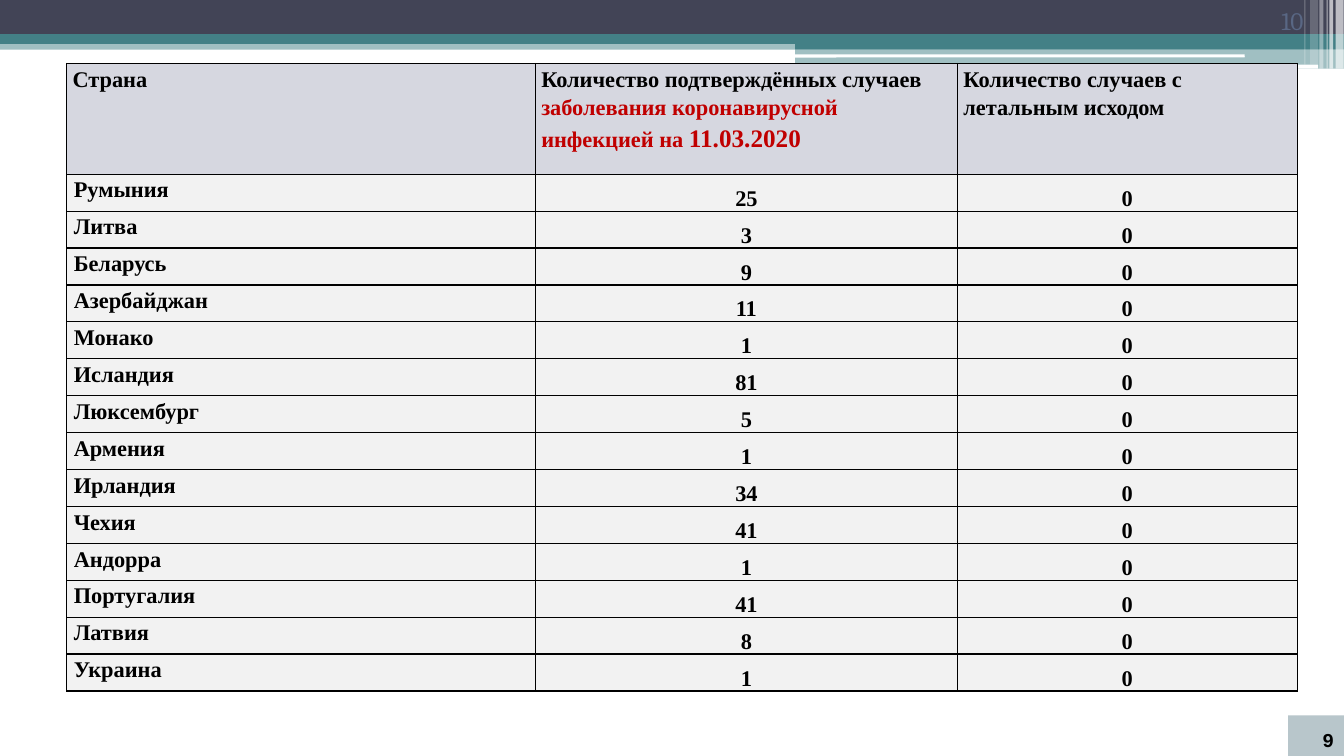
from dataclasses import dataclass

from lxml.etree import SubElement
from pptx import Presentation
from pptx.dml.color import RGBColor
from pptx.enum.shapes import MSO_SHAPE as Shp
from pptx.enum.text import MSO_ANCHOR as Anchor, PP_ALIGN as Align
from pptx.oxml import parse_xml
from pptx.oxml.ns import nsdecls, qn
from pptx.util import Cm, Pt

BLACK, WHITE, RED = "000000", "FFFFFF", "C00000"
NAVY, TEAL = "424456", "438086"
HEAD_FILL, BODY_FILL = "D6D7E0", "F2F2F2"
SERIF = "Times New Roman"


@dataclass
class Box:
    x: float
    y: float
    w: float
    h: float
    color: str
    opacity: int = 100
    kind: Shp = Shp.RECTANGLE


@dataclass
class Run:
    text: str
    size: float = 16
    color: str = BLACK
    font: str = SERIF
    bold: bool = True


@dataclass
class Country:
    name: str
    cases: int
    deaths: int = 0


BANDS = [
    Box(0, 1.02, 33.87, 0.23, TEAL, 50),
    Box(0, 0, 33.87, 0.86, NAVY),
    Box(0, 0.86, 33.87, 0.25, TEAL),
    Box(20.04, 0.99, 13.83, 0.25, TEAL),
    Box(20.04, 1.22, 13.83, 0.51, TEAL, 50),
    Box(20.02, 1.37, 11.35, 0.08, WHITE, kind=Shp.ROUNDED_RECTANGLE),
    Box(27.3, 1.63, 5.92, 0.1, WHITE, kind=Shp.ROUNDED_RECTANGLE),
]
STRIPES = [
    Box(x, 0, w, h, WHITE, opacity)
    for x, w, h, opacity in [
        (33.66, 0.2, 1.73, 65),
        (33.5, 0.1, 1.73, 65),
        (33.43, 0.03, 1.73, 60),
        (33.25, 0.1, 1.73, 40),
        (33.02, 0.2, 1.63, 20),
        (32.87, 0.03, 1.63, 30),
    ]
]
COLUMNS = [11.81, 10.64, 8.56]
HEAD_HEIGHT, ROW_HEIGHT = 2.79, 0.93
HEADER = [
    [Run("Страна")],
    [
        Run("Количество подтверждённых случаев "),
        Run("заболевания коронавирусной инфекцией на ", color=RED),
        Run("11.03.2020", 18, RED),
    ],
    [Run("Количество случаев с летальным исходом")],
]
COUNTRIES = [
    Country("Румыния", 25),
    Country("Литва", 3),
    Country("Беларусь", 9),
    Country("Азербайджан", 11),
    Country("Монако", 1),
    Country("Исландия", 81),
    Country("Люксембург", 5),
    Country("Армения", 1),
    Country("Ирландия", 34),
    Country("Чехия", 41),
    Country("Андорра", 1),
    Country("Португалия", 41),
    Country("Латвия", 8),
    Country("Украина", 1),
]


def rgb(color: str) -> RGBColor:
    return RGBColor.from_string(color)


def apply(target, values: dict) -> None:
    for name, value in values.items():
        setattr(target, name, value)


def add_box(s, box: Box):
    sp = s.shapes.add_shape(box.kind, Cm(box.x), Cm(box.y), Cm(box.w), Cm(box.h))
    sp.shadow.inherit = False
    sp.line.fill.background()
    sp.fill.solid()
    sp.fill.fore_color.rgb = rgb(box.color)
    if box.opacity < 100:
        clr = sp.fill._xPr.find(qn("a:solidFill"))[0]
        SubElement(clr, qn("a:alpha"), val=str(box.opacity * 1000))
    return sp


def write(tf, runs: list[Run], align: Align, spacing: float = 1.0) -> None:
    tf.word_wrap = True
    p = tf.paragraphs[0]
    apply(p, {"alignment": align, "line_spacing": spacing})
    for run in runs:
        r = p.add_run()
        r.text = run.text
        apply(r.font, {"size": Pt(run.size), "name": run.font, "bold": run.bold})
        r.font.color.rgb = rgb(run.color)


def add_number(sp, run: Run) -> None:
    sp.text_frame.vertical_anchor = Anchor.BOTTOM
    write(sp.text_frame, [run], Align.RIGHT)


def fill_cell(cell, runs: list[Run], fill: str, inset: float, centred: bool) -> None:
    apply(cell, {
        "margin_left": Cm(inset),
        "margin_right": Cm(inset),
        "margin_top": 0,
        "margin_bottom": 0,
        "vertical_anchor": Anchor.BOTTOM if centred else Anchor.TOP,
    })
    cell.fill.solid()
    cell.fill.fore_color.rgb = rgb(fill)
    for i, side in enumerate("LRTB"):
        cell._tc.tcPr.insert(i, parse_xml(
            f'<a:ln{side} {nsdecls("a")} w="{Pt(1)}"><a:solidFill>'
            f'<a:srgbClr val="{BLACK}"/></a:solidFill></a:ln{side}>'
        ))
    write(cell.text_frame, runs, Align.CENTER if centred else Align.LEFT, 1.15)


def add_country_table(s) -> None:
    height = HEAD_HEIGHT + ROW_HEIGHT * len(COUNTRIES)
    table = s.shapes.add_table(
        len(COUNTRIES) + 1, len(COLUMNS),
        Cm(1.68), Cm(1.6), Cm(sum(COLUMNS)), Cm(height),
    ).table
    for column, width in zip(table.columns, COLUMNS):
        column.width = Cm(width)
    for i, row in enumerate(table.rows):
        row.height = Cm(ROW_HEIGHT if i else HEAD_HEIGHT)
    for j, runs in enumerate(HEADER):
        fill_cell(table.cell(0, j), runs, HEAD_FILL, 0.15, False)
    for i, c in enumerate(COUNTRIES, 1):
        for j, value in enumerate((c.name, c.cases, c.deaths)):
            fill_cell(table.cell(i, j), [Run(str(value))], BODY_FILL, 0.18, j > 0)


def main() -> None:
    prs = Presentation()
    apply(prs, {"slide_width": Cm(33.87), "slide_height": Cm(19.05)})
    s = prs.slides.add_slide(prs.slide_layouts[6])
    for box in BANDS + STRIPES:
        add_box(s, box)
    top_number = s.shapes.add_textbox(Cm(30.28), 0, Cm(2.82), Cm(1.02))
    add_number(top_number, Run("10", 18, "596784", "Cambria", False))
    add_country_table(s)
    corner = add_box(s, Box(32.46, 18.03, 1.41, 1.02, "9BAFB5", 70))
    add_number(corner, Run("9", 14, font="Courier New"))
    prs.save("out.pptx")


if __name__ == "__main__":
    main()
